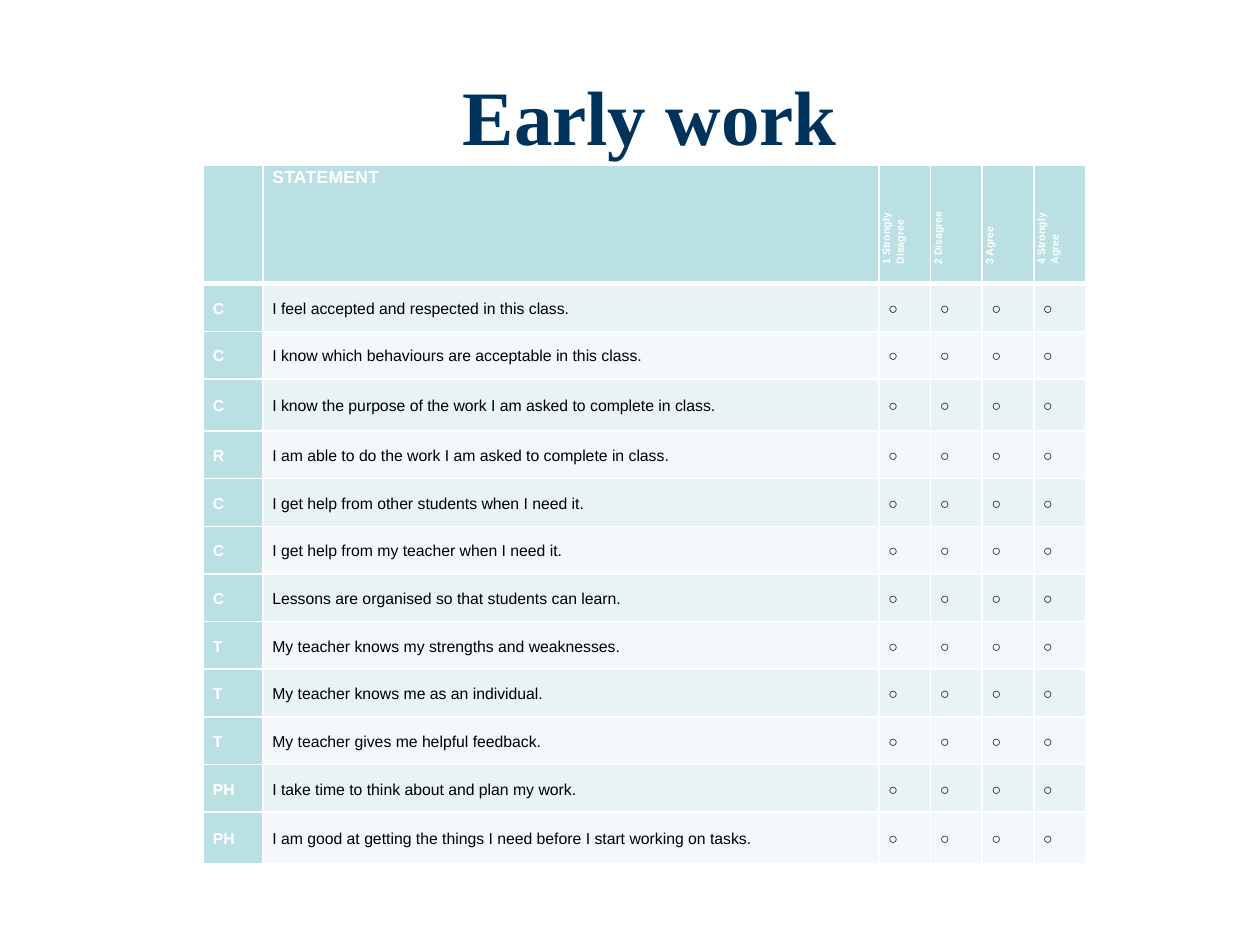
import pptx
import pptx.dml.color
import pptx.enum.text
import pptx.oxml
import pptx.oxml.ns
import pptx.util
from pptx.util import Cm

TITLE = "Early work"
HEADERS = ["", "STATEMENT", "1 Strongly Disagree", "2 Disagree", "3 Agree", "4 Strongly Agree"]
STATEMENTS = [
    ("C", "I feel accepted and respected in this class."),
    ("C", "I know which behaviours are acceptable in this class."),
    ("C", "I know the purpose of the work I am asked to complete in class."),
    ("R", "I am able to do the work I am asked to complete in class."),
    ("C", "I get help from other students when I need it."),
    ("C", "I get help from my teacher when I need it."),
    ("C", "Lessons are organised so that students can learn."),
    ("T", "My teacher knows my strengths and weaknesses."),
    ("T", "My teacher knows me as an individual."),
    ("T", "My teacher gives me helpful feedback."),
    ("PH", "I take time to think about and plan my work."),
    ("PH", "I am good at getting the things I need before I start working on tasks."),
]
RATING_COUNT = 4
RATING_MARK = "○"
COLOURS = {
    "title": "00335B",
    "header": "BBE0E3",
    "odd": "E7F3F4",
    "even": "F3F9FA",
    "white": "FFFFFF",
    "black": "000000",
}
COLUMN_WIDTHS = [1.2, 12.42] + [1.04] * RATING_COUNT
HEADER_HEIGHT, ROW_HEIGHT, TALL_ROW_HEIGHT = 1.47, 0.96, 1.05
TALL_ROWS = {3, 12}


def colour(name):
    return pptx.dml.color.RGBColor.from_string(COLOURS[name])


def write_text(text_frame, text, *, size, color, font="Arial", bold=False,
               align=None, line_spacing=None, indent=None, spacing=None):
    paragraph = text_frame.paragraphs[0]
    paragraph.alignment = align
    paragraph.line_spacing = line_spacing
    if indent is not None:
        properties = paragraph._p.get_or_add_pPr()
        for side in ("marL", "marR"):
            properties.set(side, str(Cm(indent)))
        properties.set("indent", "0")
    run = paragraph.add_run()
    run.text = text
    run.font.name = font
    run.font.size = pptx.util.Pt(size)
    run.font.bold = bold
    run.font.color.rgb = colour(color)
    if spacing is not None:
        run._r.get_or_add_rPr().set("spc", str(spacing))


def format_cell(cell, fill, top, bottom):
    cell.margin_left = cell.margin_right = Cm(0.19)
    cell.margin_top = cell.margin_bottom = 0
    cell.fill.solid()
    cell.fill.fore_color.rgb = colour(fill)
    properties = cell._tc.get_or_add_tcPr()
    for index, (side, width) in enumerate([("L", 1), ("R", 1), ("T", top), ("B", bottom)]):
        properties.insert(index, pptx.oxml.parse_xml(
            f'<a:ln{side} {pptx.oxml.ns.nsdecls("a")} w="{pptx.util.Pt(width)}">'
            f'<a:solidFill><a:srgbClr val="{COLOURS["white"]}"/></a:solidFill></a:ln{side}>'))


def fill_header(table):
    for column, text in enumerate(HEADERS):
        cell = table.cell(0, column)
        format_cell(cell, "header", 1, 3)
        if column == 1:
            write_text(cell.text_frame, text, size=10, color="white", bold=True,
                       line_spacing=1.15, spacing=20)
        elif column > 1:
            cell._tc.get_or_add_tcPr().set("vert", "vert270")
            write_text(cell.text_frame, text, size=6, color="white", bold=True,
                       line_spacing=1.15, indent=0.2)


def fill_statements(table):
    for row, statement in enumerate(STATEMENTS, start=1):
        band = "odd" if row % 2 else "even"
        for column, text in enumerate([*statement, *[RATING_MARK] * RATING_COUNT]):
            is_code = column == 0
            cell = table.cell(row, column)
            cell.vertical_anchor = pptx.enum.text.MSO_ANCHOR.MIDDLE
            format_cell(cell, "header" if is_code else band, 3 if row == 1 else 1, 1)
            write_text(cell.text_frame, text, size=9, bold=is_code,
                       color="white" if is_code else "black", line_spacing=1.15)


def main():
    presentation = pptx.Presentation()
    presentation.slide_width, presentation.slide_height = Cm(25.4), Cm(19.05)
    slide = presentation.slides.add_slide(presentation.slide_layouts[5])

    title = slide.shapes.title
    title.left, title.top, title.width, title.height = Cm(2.31), Cm(0.72), Cm(21.59), Cm(3.18)
    title.text_frame.vertical_anchor = pptx.enum.text.MSO_ANCHOR.MIDDLE
    write_text(title.text_frame, TITLE, size=44, color="title", font="Times New Roman",
               bold=True, align=pptx.enum.text.PP_ALIGN.CENTER)

    row_heights = [HEADER_HEIGHT] + [
        TALL_ROW_HEIGHT if row in TALL_ROWS else ROW_HEIGHT
        for row in range(1, len(STATEMENTS) + 1)]
    table = slide.shapes.add_table(
        len(row_heights), len(COLUMN_WIDTHS), Cm(4.1), Cm(3.33),
        Cm(sum(COLUMN_WIDTHS)), Cm(sum(row_heights))).table
    for column, width in zip(table.columns, COLUMN_WIDTHS):
        column.width = Cm(width)
    for row, height in zip(table.rows, row_heights):
        row.height = Cm(height)
    fill_header(table)
    fill_statements(table)
    presentation.save("out.pptx")


if __name__ == "__main__":
    main()
